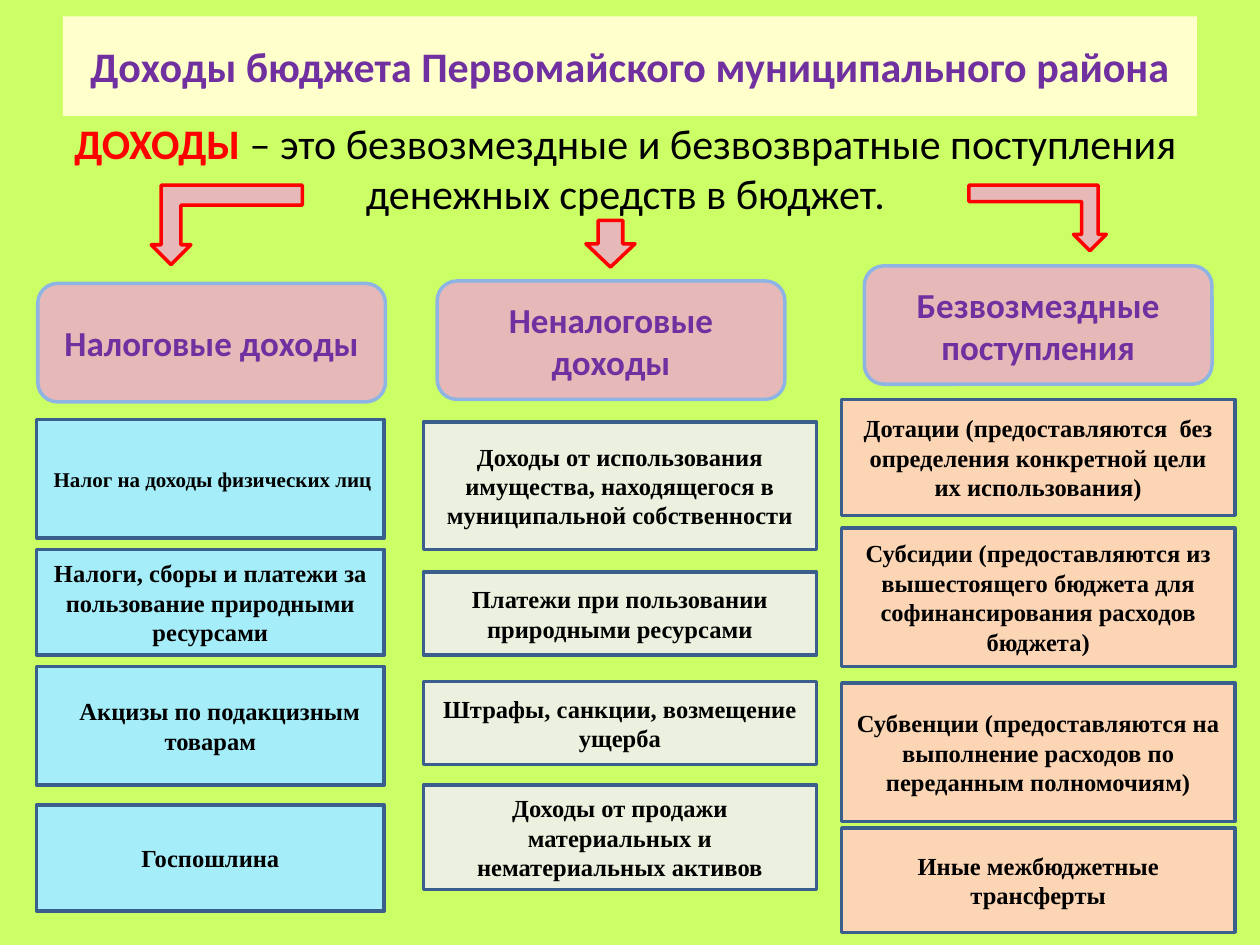
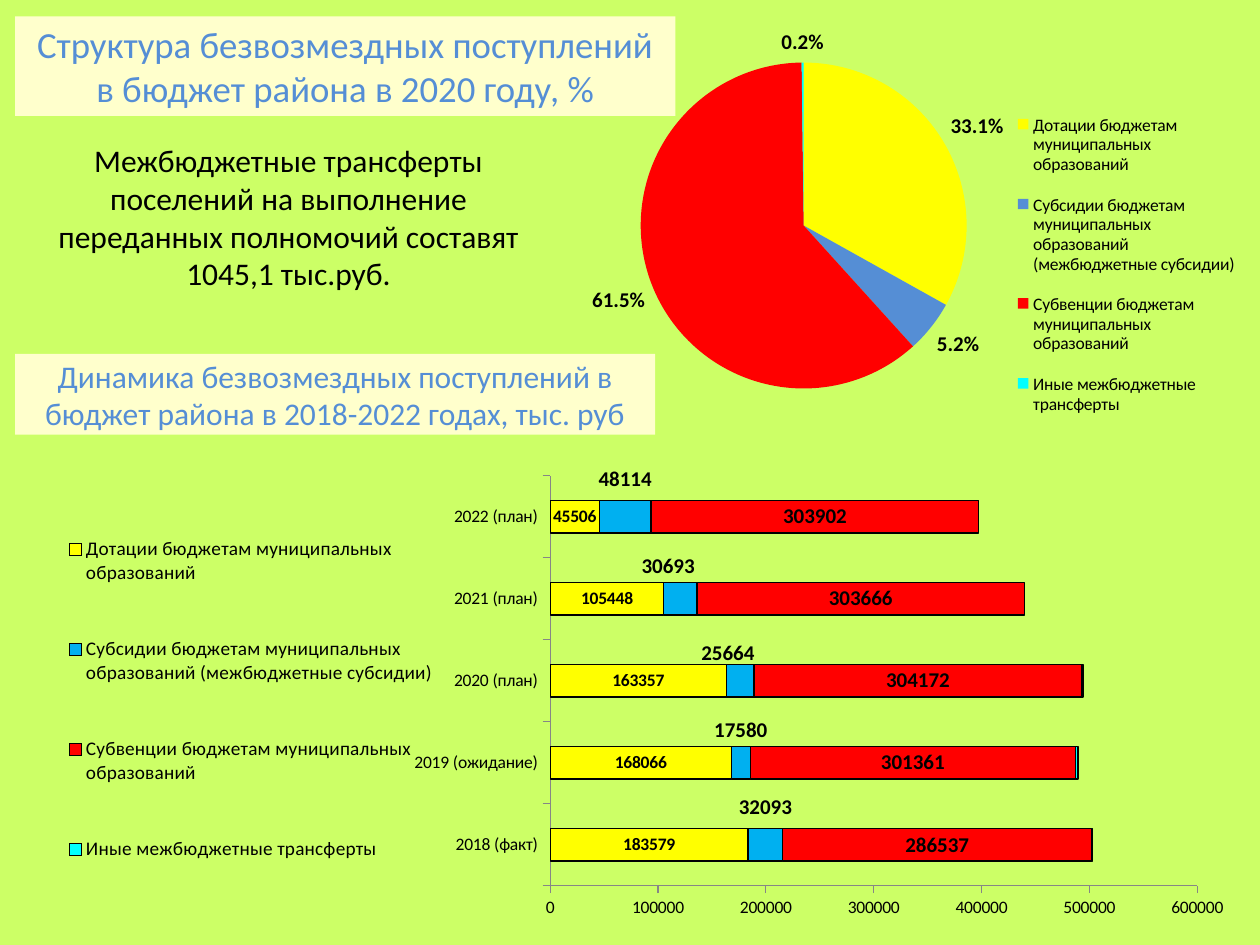
"""Build two slides on the revenue of a district budget."""
from dataclasses import dataclass
from typing import Any

import lxml.etree
import pptx
import pptx.chart.data
import pptx.dml.color
import pptx.enum.chart
import pptx.enum.shapes
import pptx.enum.text
import pptx.oxml
import pptx.oxml.ns
import pptx.util

Inches = pptx.util.Inches
Pt = pptx.util.Pt
Shapes = pptx.enum.shapes.MSO_SHAPE
Align = pptx.enum.text.PP_ALIGN
Charts = pptx.enum.chart
qn = pptx.oxml.ns.qn


@dataclass(frozen=True)
class Theme:
    background: str = "CCFF66"
    band: str = "FFFFCC"
    purple: str = "7030A0"
    blue: str = "558ED5"
    sky: str = "00B0F0"
    pink: str = "E6B9B8"
    red: str = "FF0000"
    yellow: str = "FFFF00"
    cyan: str = "00FFFF"
    black: str = "000000"
    header_line: str = "8EB4E3"
    item_line: str = "3A5F8C"
    axis_line: str = "868686"
    tax_fill: str = "A5EDF9"
    non_tax_fill: str = "EBF1DE"
    grant_fill: str = "FCD5B5"
    sans: str = "Calibri"
    serif: str = "Times New Roman"
    title_size: float = 24
    long_title_size: float = 21
    header_size: float = 20
    body_size: float = 18
    item_size: float = 14
    label_size: float = 12
    legend_size: float = 11
    chart_size: float = 10


THEME = Theme()


@dataclass(frozen=True)
class Box:
    left: float
    top: float
    width: float
    height: float

    def lengths(self) -> tuple:
        return tuple(Inches(value) for value in (self.left, self.top, self.width, self.height))


@dataclass(frozen=True)
class Style:
    size: float
    color: str
    font: str = THEME.sans
    bold: bool = False
    outline: bool = False
    align: Any = Align.CENTER


@dataclass(frozen=True)
class Item:
    top: float
    height: float
    text: str
    style: Style = Style(THEME.item_size, THEME.black, THEME.serif, True)
    indent: float = 0


@dataclass(frozen=True)
class Column:
    header: str
    header_left: float
    header_top: float
    left: float
    width: float
    fill: str
    items: tuple[Item, ...]


@dataclass(frozen=True)
class Arrow:
    kind: Any
    box: Box
    rotation: float = 0
    flipped: bool = False


@dataclass(frozen=True)
class BarSeries:
    name: str
    values: tuple
    color: str
    label_size: float = 0
    label_shifts: tuple = ()


HEADER_STYLE = Style(THEME.header_size, THEME.purple, bold=True)
BODY_STYLE = Style(THEME.body_size, THEME.black)
TRANSFER_NAMES = (
    "Дотации бюджетам муниципальных образований",
    "Субсидии бюджетам муниципальных образований (межбюджетные субсидии)",
    "Субвенции бюджетам муниципальных образований",
    "Иные межбюджетные трансферты",
)
COLUMNS = (
    Column("Налоговые доходы", 0.3, 2.25, 0.29, 2.76, THEME.tax_fill, (
        Item(3.33, 0.94, "Налог на доходы физических лиц",
             Style(THEME.label_size, THEME.black, THEME.serif, True, align=Align.RIGHT)),
        Item(4.36, 0.84, "Налоги, сборы и платежи за пользование природными ресурсами"),
        Item(5.29, 0.94, "Акцизы по подакцизным товарам", indent=0.15),
        Item(6.39, 0.84, "Госпошлина"),
    )),
    Column("Неналоговые доходы", 3.47, 2.23, 3.36, 3.12, THEME.non_tax_fill, (
        Item(3.35, 1.01, "Доходы от использования имущества, находящегося в муниципальной собственности"),
        Item(4.54, 0.66, "Платежи при пользовании природными ресурсами"),
        Item(5.41, 0.66, "Штрафы, санкции, возмещение ущерба"),
        Item(6.23, 0.83, "Доходы от продажи материальных и нематериальных активов"),
    )),
    Column("Безвозмездные поступления", 6.86, 2.11, 6.68, 3.12, THEME.grant_fill, (
        Item(3.17, 0.92, "Дотации (предоставляются  без определения конкретной цели их использования)"),
        Item(4.19, 1.1, "Субсидии (предоставляются из вышестоящего бюджета для софинансирования расходов бюджета)"),
        Item(5.42, 1.1, "Субвенции (предоставляются на выполнение расходов по переданным полномочиям)"),
        Item(6.57, 0.83, "Иные межбюджетные трансферты"),
    )),
)
ARROWS = (
    Arrow(Shapes.BENT_UP_ARROW, Box(7.69, 1.47, 1.09, 0.52), flipped=True),
    Arrow(Shapes.BENT_UP_ARROW, Box(1.2, 1.47, 1.2, 0.63), rotation=180),
    Arrow(Shapes.DOWN_ARROW, Box(4.65, 1.75, 0.39, 0.37)),
)
YEARS = ("2018 (факт)", "2019 (ожидание)", "2020 (план)", "2021 (план)", "2022 (план)")
BAR_SERIES = (
    BarSeries(TRANSFER_NAMES[0], (183579, 168066, 163357, 105448, 45506), THEME.yellow, THEME.chart_size),
    BarSeries(TRANSFER_NAMES[1], (32093, 17580, 25664, 30693, 48114), THEME.sky, THEME.label_size,
              ((0, -0.08), (0, -0.07), (-0.01, -0.06), (-0.01, -0.07), (0, -0.08))),
    BarSeries(TRANSFER_NAMES[2], (286537, 301361, 304172, 303666, 303902), THEME.red, THEME.label_size),
    BarSeries(TRANSFER_NAMES[3], (500, 2500, 1000, None, None), THEME.cyan),
)


def rgb(color: str) -> pptx.dml.color.RGBColor:
    return pptx.dml.color.RGBColor.from_string(color)


def paint(format_owner: Any, fill: str, line: str = "", width: float = 2) -> None:
    format_owner.fill.solid()
    format_owner.fill.fore_color.rgb = rgb(fill)
    if line:
        format_owner.line.color.rgb = rgb(line)
        format_owner.line.width = Pt(width)
    else:
        format_owner.line.fill.background()


def set_font(font: Any, style: Style) -> None:
    font.name, font.size, font.bold = style.font, Pt(style.size), style.bold
    font.color.rgb = rgb(style.color)


def format_run(run: Any, style: Style) -> None:
    set_font(run.font, style)
    if style.outline:
        outline = pptx.oxml.parse_xml(
            f'<a:ln {pptx.oxml.ns.nsdecls("a")} w="9525"><a:solidFill>'
            f'<a:srgbClr val="{THEME.blue}"/></a:solidFill></a:ln>')
        run.font._element.insert(0, outline)


def add_box(slide: Any, kind: Any, box: Box, fill: str, line: str = "",
            text: str = "", style: Style = BODY_STYLE, indent: float = 0) -> Any:
    shape = slide.shapes.add_shape(kind, *box.lengths())
    shape.shadow.inherit = False
    paint(shape, fill, line)
    if text:
        shape.text_frame.text = text
        shape.text_frame.word_wrap = True
        shape.text_frame.vertical_anchor = pptx.enum.text.MSO_ANCHOR.MIDDLE
        paragraph = shape.text_frame.paragraphs[0]
        paragraph.alignment = style.align
        format_run(paragraph.runs[0], style)
        if indent:
            paragraph._p.get_or_add_pPr().set("indent", str(Inches(indent)))
    return shape


def add_band(slide: Any, box: Box, text: str, size: float, color: str, bold: bool = False) -> None:
    style = Style(size, color, bold=bold, outline=True)
    add_box(slide, Shapes.RECTANGLE, box, THEME.band, text=text, style=style)


def add_text(slide: Any, box: Box, parts: tuple) -> None:
    text_frame = slide.shapes.add_textbox(*box.lengths()).text_frame
    text_frame.word_wrap = True
    paragraph = text_frame.paragraphs[0]
    paragraph.alignment = Align.CENTER
    for text, style in parts:
        run = paragraph.add_run()
        run.text = text
        format_run(run, style)


def make_layout(target: str = "", **sizes: float) -> Any:
    layout = lxml.etree.Element(qn("c:layout"))
    manual = lxml.etree.SubElement(layout, qn("c:manualLayout"))
    settings = {"layoutTarget": target} if target else {}
    if "w" in sizes:
        settings |= {"xMode": "edge", "yMode": "edge"}
    for name, value in (settings | sizes).items():
        lxml.etree.SubElement(manual, qn(f"c:{name}")).set("val", str(value))
    return layout


def add_chart(slide: Any, kind: Any, box: Box, data: Any, plot: Box, legend: Box,
              legend_position: Any, legend_size: float) -> Any:
    chart = slide.shapes.add_chart(kind, *box.lengths(), data).chart
    chart.has_title = False
    set_font(chart.font, Style(THEME.chart_size, THEME.black))
    chart.has_legend = True
    chart.legend.position = legend_position
    chart.legend.include_in_layout = False
    set_font(chart.legend.font, Style(legend_size, THEME.black))
    plot_area = chart._chartSpace.chart.plotArea
    legend_element = chart.legend._element
    for parent in (plot_area, legend_element):
        for old in parent.findall(qn("c:layout")):
            parent.remove(old)
    plot_area.insert(0, make_layout("inner", x=plot.left, y=plot.top, w=plot.width, h=plot.height))
    legend_element.find(qn("c:legendPos")).addnext(
        make_layout(x=legend.left, y=legend.top, w=legend.width, h=legend.height))
    return chart


def show_labels(labels: Any, size: float, position: Any) -> None:
    labels.show_value = True
    labels.position = position
    set_font(labels.font, Style(size, THEME.black, bold=True))
    for leader in labels._element.findall(qn("c:showLeaderLines")):
        leader.set("val", "0")


def add_structure_pie(slide: Any) -> None:
    data = pptx.chart.data.CategoryChartData(number_format="0.0%")
    data.categories = TRANSFER_NAMES
    data.add_series("Series 1", (0.331, 0.052, 0.615, 0.002))
    chart = add_chart(slide, Charts.XL_CHART_TYPE.PIE, Box(4.61, 0.13, 5.28, 3.46), data,
                      Box(0.09, 0.1, 0.49, 0.76), Box(0.66, 0.18, 0.33, 0.78),
                      Charts.XL_LEGEND_POSITION.RIGHT, THEME.chart_size)
    series = chart.plots[0].series[0]
    for index, color in enumerate((THEME.yellow, THEME.blue, THEME.red, THEME.cyan)):
        paint(series.points[index].format, color)
    labels = series.data_labels
    show_labels(labels, THEME.label_size, Charts.XL_LABEL_POSITION.OUTSIDE_END)
    labels.number_format, labels.number_format_is_linked = "0.0%", False


def add_dynamics_bars(slide: Any) -> None:
    data = pptx.chart.data.CategoryChartData(number_format="0")
    data.categories = YEARS
    for entry in BAR_SERIES:
        data.add_series(entry.name, entry.values)
    chart = add_chart(slide, Charts.XL_CHART_TYPE.BAR_STACKED, Box(0.2, 3.59, 9.69, 3.7), data,
                      Box(0.43, 0.05, 0.53, 0.88), Box(0.03, 0.07, 0.31, 0.92),
                      Charts.XL_LEGEND_POSITION.LEFT, THEME.legend_size)
    plot = chart.plots[0]
    plot.gap_width, plot.overlap, plot.vary_by_categories = 150, 100, False
    for axis in (chart.category_axis, chart.value_axis):
        axis.has_major_gridlines = False
        axis.major_tick_mark = Charts.XL_TICK_MARK.OUTSIDE
        axis.format.line.color.rgb = rgb(THEME.axis_line)
        set_font(axis.tick_labels.font, Style(THEME.chart_size, THEME.black))
    value_axis = chart.value_axis
    value_axis.minimum_scale, value_axis.maximum_scale, value_axis.major_unit = 0, 600000, 100000
    for series, entry in zip(plot.series, BAR_SERIES):
        paint(series.format, entry.color, THEME.black, 0.75)
        if entry.label_size:
            show_labels(series.data_labels, entry.label_size, Charts.XL_LABEL_POSITION.CENTER)
        for index in range(len(entry.label_shifts)):
            label = series.points[index].data_label
            set_font(label.font, Style(entry.label_size, THEME.black, bold=True))
            label.position = Charts.XL_LABEL_POSITION.CENTER
        for mark, (x, y) in zip(series._element.iter(qn("c:dLbl")), entry.label_shifts):
            mark.find(qn("c:idx")).addnext(make_layout(x=x, y=y))


def add_slide(presentation: Any) -> Any:
    slide = presentation.slides.add_slide(presentation.slide_layouts[6])
    slide.background.fill.solid()
    slide.background.fill.fore_color.rgb = rgb(THEME.background)
    return slide


def build_revenue_slide(presentation: Any) -> None:
    slide = add_slide(presentation)
    add_band(slide, Box(0.5, 0.13, 9, 0.79), "Доходы бюджета Первомайского муниципального района",
             THEME.title_size, THEME.purple, True)
    for column in COLUMNS:
        add_box(slide, Shapes.ROUNDED_RECTANGLE, Box(column.header_left, column.header_top, 2.76, 0.94),
                THEME.pink, THEME.header_line, column.header, HEADER_STYLE)
        for item in column.items:
            add_box(slide, Shapes.RECTANGLE, Box(column.left, item.top, column.width, item.height),
                    column.fill, THEME.item_line, item.text, item.style, item.indent)
    add_text(slide, Box(0.28, 0.88, 9.37, 0.91), (
        ("ДОХОДЫ", Style(THEME.title_size, THEME.red, bold=True)),
        (" – это безвозмездные и безвозвратные поступления денежных средств в бюджет.",
         Style(THEME.title_size, THEME.black))))
    for arrow in ARROWS:
        shape = add_box(slide, arrow.kind, arrow.box, THEME.pink, THEME.red)
        shape.rotation = arrow.rotation
        if arrow.flipped:
            shape.element.spPr.find(qn("a:xfrm")).set("flipV", "1")


def build_transfers_slide(presentation: Any) -> None:
    slide = add_slide(presentation)
    add_band(slide, Box(0.12, 0.13, 5.24, 0.79),
             "Структура безвозмездных поступлений в бюджет района в 2020 году, %",
             THEME.long_title_size, THEME.blue)
    add_band(slide, Box(0.12, 2.81, 5.08, 0.64),
             "Динамика безвозмездных поступлений в бюджет района в 2018-2022 годах, тыс. руб",
             THEME.body_size, THEME.blue)
    add_text(slide, Box(0.28, 1.07, 4.02, 1.31), ((
        "Межбюджетные трансферты поселений на выполнение переданных полномочий составят 1045,1 тыс.руб.",
        BODY_STYLE),))
    add_structure_pie(slide)
    add_dynamics_bars(slide)


def main() -> None:
    presentation = pptx.Presentation()
    presentation.slide_width, presentation.slide_height = Inches(10), Inches(7.5)
    build_revenue_slide(presentation)
    build_transfers_slide(presentation)
    presentation.save("out.pptx")


if __name__ == "__main__":
    main()
